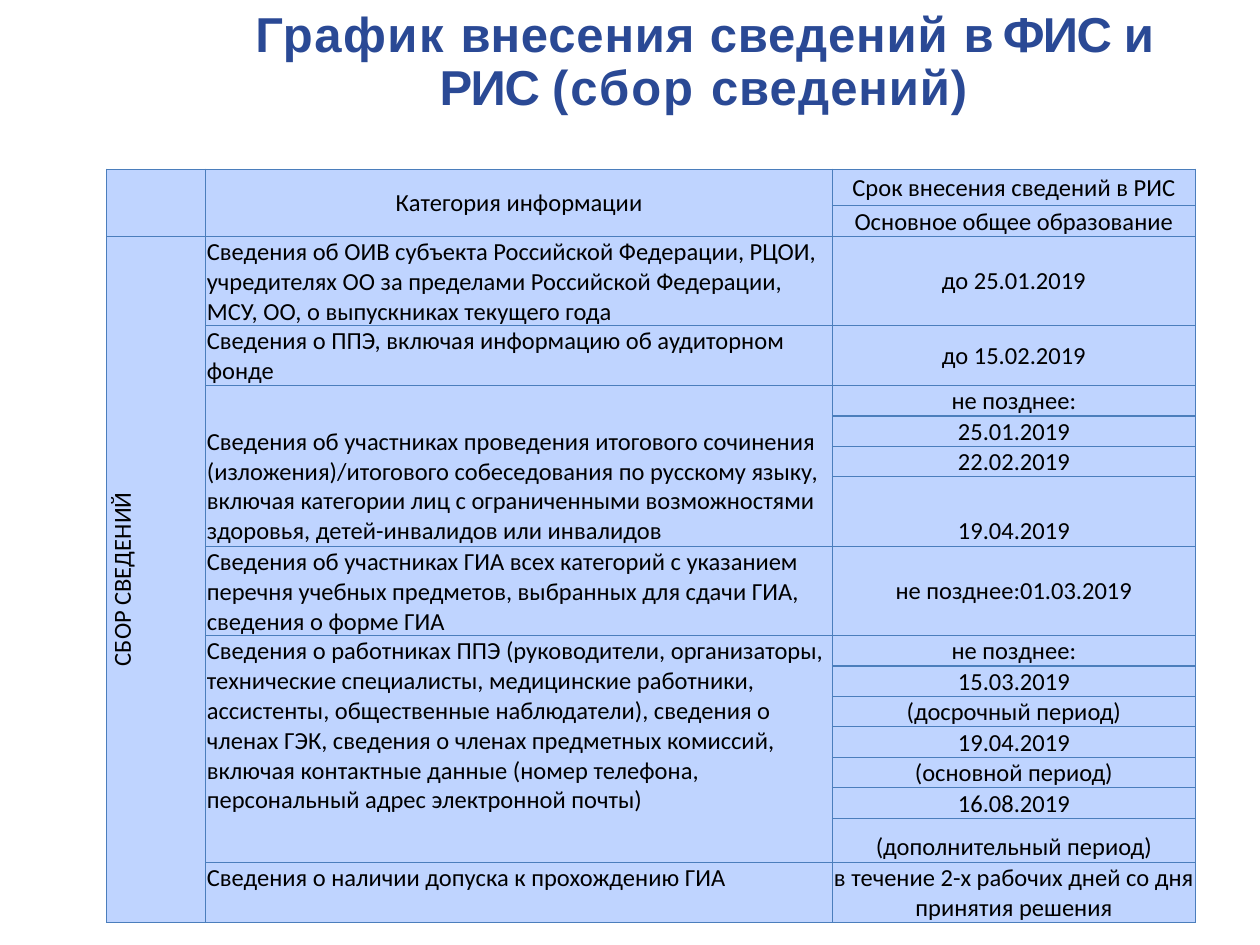
from dataclasses import dataclass

import lxml.etree
import pptx
import pptx.dml.color
import pptx.enum.text
import pptx.oxml
import pptx.oxml.ns
import pptx.util
from pptx.util import Cm

Align = pptx.enum.text.PP_ALIGN
Anchor = pptx.enum.text.MSO_ANCHOR


@dataclass(frozen=True)
class Theme:
    title_font: str = "Arial"
    title_size: float = 28
    title_leading: float = 30.2
    title_color: str = "2A4995"
    table_font: str = "Calibri"
    table_size: float = 14
    text_color: str = "000000"
    cell_fill: str = "BFD4FF"
    border_color: str = "4B7EBC"
    border_width: float = 0.75


@dataclass(frozen=True)
class Deadline:
    text: str
    height: float  # row height in cm
    anchor: Anchor = Anchor.BOTTOM


@dataclass(frozen=True)
class Category:
    text: str
    deadlines: tuple[Deadline, ...]
    anchor: Anchor = Anchor.BOTTOM


THEME = Theme()
COLUMN_WIDTHS = (2.0, 12.63, 7.32)
LINE = 0.43

# Text pieces with their letter spacing in points
TITLE = (
    ("График ", 0.9), ("в", -2.4), ("несения сведений ", 0.5), ("в ", -2.5),
    ("ФИС ", -0.9), ("и ", -0.6), ("РИС ", -0.8), ("(сбор ", 1.2),
    ("све", 0.6), ("д", 0.8), ("ений)", 0.5),
)

HEADER = Category(
    "Категория информации",
    (Deadline("Срок внесения сведений в РИС", 0.74, Anchor.MIDDLE),
     Deadline("Основное общее образование", 0.48)),
    Anchor.MIDDLE,
)
STAGE = "СБОР СВЕДЕНИЙ"
CATEGORIES = (
    Category(
        "Сведения об ОИВ субъекта Российской Федерации, РЦОИ, учредителях ОО "
        "за пределами Российской Федерации, МСУ, ОО, о выпускниках текущего года",
        (Deadline("до 25.01.2019", 1.73, Anchor.MIDDLE),),
    ),
    Category(
        "Сведения о ППЭ, включая информацию об аудиторном фонде",
        (Deadline("до 15.02.2019", 0.76, Anchor.MIDDLE),),
    ),
    Category(
        "Сведения об участниках проведения итогового сочинения "
        "(изложения)/итогового собеседования по русскому языку, включая "
        "категории лиц с ограниченными возможностями здоровья, "
        "детей-инвалидов или инвалидов",
        (Deadline("не позднее:", 0.51), Deadline("25.01.2019", LINE),
         Deadline("22.02.2019", LINE), Deadline("19.04.2019", 1.4)),
    ),
    Category(
        "Сведения об участниках ГИА всех категорий с указанием перечня учебных "
        "предметов, выбранных для сдачи ГИА, сведения о форме ГИА",
        (Deadline("не позднее:01.03.2019", 1.6, Anchor.MIDDLE),),
    ),
    Category(
        "Сведения о работниках ППЭ (руководители, организаторы, технические "
        "специалисты, медицинские работники, ассистенты, общественные "
        "наблюдатели), сведения о членах ГЭК, сведения о членах предметных "
        "комиссий, включая контактные данные (номер телефона, персональный "
        "адрес электронной почты)",
        (Deadline("не позднее:", LINE), Deadline("15.03.2019", LINE),
         Deadline("(досрочный период)", LINE), Deadline("19.04.2019", LINE),
         Deadline("(основной период)", LINE), Deadline("16.08.2019", LINE),
         Deadline("(дополнительный период)", 0.89)),
        Anchor.TOP,
    ),
    Category(
        "Сведения о наличии допуска к прохождению ГИА",
        (Deadline("в течение 2-х рабочих дней со дня принятия решения", 0.74),),
        Anchor.TOP,
    ),
)


def rgb(value: str) -> pptx.dml.color.RGBColor:
    return pptx.dml.color.RGBColor.from_string(value)


def set_font(font, name: str, size: float, color: str) -> None:
    font.name = name
    font.size = pptx.util.Pt(size)
    font.color.rgb = rgb(color)


def fill_title(title) -> None:
    title.left, title.top = Cm(5.1), Cm(0.2)
    title.width, title.height = Cm(18.62), Cm(2.13)
    frame = title.text_frame
    frame.margin_left = frame.margin_right = 0
    frame.margin_top = frame.margin_bottom = 0
    frame.word_wrap = True
    frame.vertical_anchor = Anchor.TOP
    frame.auto_size = pptx.enum.text.MSO_AUTO_SIZE.SHAPE_TO_FIT_TEXT
    heading = frame.paragraphs[0]
    heading.alignment = Align.LEFT
    heading.line_spacing = pptx.util.Pt(THEME.title_leading)
    heading.space_before = pptx.util.Pt(0)
    indents = heading._p.get_or_add_pPr()
    indents.set("marL", str(Cm(3.76)))
    indents.set("indent", str(Cm(-3.71)))
    set_font(heading.font, THEME.title_font, THEME.title_size, THEME.title_color)
    heading.font.bold = True
    for text, spacing in TITLE:
        piece = heading.add_run()
        piece.text = text
        properties = piece._r.get_or_add_rPr()
        properties.set("spc", str(round(spacing * 100)))
        properties.set("kern", "0")


def style_cell(cell) -> None:
    """Set borders first: the schema wants them ahead of the fill."""
    properties = cell._tc.get_or_add_tcPr()
    for side in ("lnL", "lnR", "lnT", "lnB"):
        properties.append(pptx.oxml.parse_xml(
            f'<a:{side} {pptx.oxml.ns.nsdecls("a")} '
            f'w="{pptx.util.Pt(THEME.border_width)}"><a:solidFill>'
            f'<a:srgbClr val="{THEME.border_color}"/></a:solidFill></a:{side}>'
        ))
    cell.fill.solid()
    cell.fill.fore_color.rgb = rgb(THEME.cell_fill)
    cell.margin_left = cell.margin_right = cell.margin_top = Cm(0.02)
    cell.margin_bottom = 0


def size_empty_cell(cell) -> None:
    """Keep the default 18 pt of an empty cell from stretching its row."""
    end = lxml.etree.SubElement(
        cell.text_frame.paragraphs[0]._p, pptx.oxml.ns.qn("a:endParaRPr"))
    end.set("sz", str(round(THEME.table_size * 100)))
    font = lxml.etree.SubElement(end, pptx.oxml.ns.qn("a:latin"))
    font.set("typeface", THEME.table_font)


def write_cell(cell, text: str, anchor: Anchor, alignment: Align) -> None:
    cell.text = text
    cell.vertical_anchor = anchor
    paragraph = cell.text_frame.paragraphs[0]
    paragraph.alignment = alignment
    set_font(paragraph.font, THEME.table_font, THEME.table_size, THEME.text_color)


def write_category(table, first: int, category: Category, alignment: Align) -> int:
    """Write a category beside its deadlines and return the next free row."""
    following = first + len(category.deadlines)
    name_cell = table.cell(first, 1)
    if following - first > 1:
        name_cell.merge(table.cell(following - 1, 1))
    write_cell(name_cell, category.text, category.anchor, alignment)
    for row, deadline in enumerate(category.deadlines, first):
        table.rows[row].height = Cm(deadline.height)
        write_cell(table.cell(row, 2), deadline.text, deadline.anchor, Align.CENTER)
    return following


def add_schedule(slide) -> None:
    row_count = sum(len(c.deadlines) for c in (HEADER, *CATEGORIES))
    schedule = slide.shapes.add_table(
        row_count, len(COLUMN_WIDTHS),
        Cm(2.15), Cm(3.41), Cm(sum(COLUMN_WIDTHS)), Cm(15.14))
    table = schedule.table
    for column, width in zip(table.columns, COLUMN_WIDTHS):
        column.width = Cm(width)
    for cell in table.iter_cells():
        style_cell(cell)

    body_start = row = write_category(table, 0, HEADER, Align.CENTER)
    table.cell(0, 0).merge(table.cell(body_start - 1, 0))
    for category in CATEGORIES:
        row = write_category(table, row, category, Align.LEFT)

    stage_cell = table.cell(body_start, 0)
    stage_cell.merge(table.cell(row - 1, 0))
    write_cell(stage_cell, STAGE, Anchor.MIDDLE, Align.CENTER)
    stage_cell._tc.get_or_add_tcPr().set("vert", "vert270")
    for cell in table.iter_cells():
        if not cell.text:
            size_empty_cell(cell)
    schedule.height = Cm(15.14)


def main() -> None:
    deck = pptx.Presentation()
    deck.slide_width, deck.slide_height = Cm(25.4), Cm(19.05)
    slide = deck.slides.add_slide(deck.slide_layouts.get_by_name("Title Only"))
    fill_title(slide.shapes.title)
    add_schedule(slide)
    deck.save("out.pptx")


if __name__ == "__main__":
    main()
